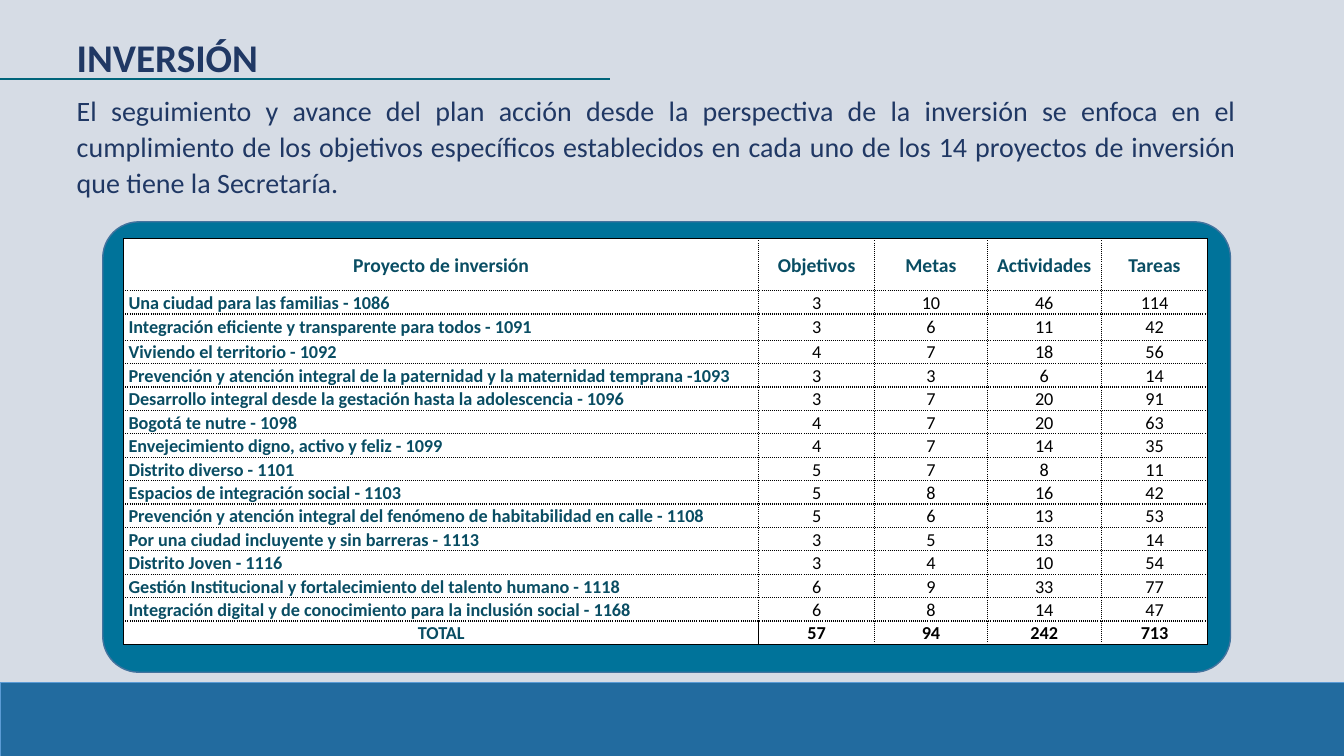
from dataclasses import dataclass

from lxml import etree
from pptx import Presentation
from pptx.dml.color import RGBColor
from pptx.enum import shapes, text
from pptx.oxml import ns
from pptx.util import Cm, Pt


@dataclass(frozen=True)
class Theme:
    font: str = "Calibri"
    background: str = "D6DCE5"
    heading: str = "203864"
    rule: str = "00647A"
    footer: str = "226B9F"
    footer_edge: str = "5B9BD5"
    panel: str = "00739A"
    panel_edge: str = "43739E"
    label: str = "094D63"
    ink: str = "000000"
    paper: str = "FFFFFF"
    title_size: float = 28
    body_size: float = 20
    header_size: float = 14
    row_size: float = 13
    spacing: float = 1.07


@dataclass(frozen=True)
class Box:
    """A place on the slide, in centimetres."""
    left: float
    top: float
    width: float
    height: float

    def lengths(self) -> tuple:
        return Cm(self.left), Cm(self.top), Cm(self.width), Cm(self.height)


@dataclass(frozen=True)
class Project:
    name: str
    figures: tuple[int, int, int, int]


@dataclass(frozen=True)
class Panel:
    kind: shapes.MSO_SHAPE
    box: Box
    fill: str
    edge: str
    edge_width: float


THEME = Theme()
ALIGN = text.PP_ALIGN
WIDTH, HEIGHT = 33.87, 19.05

FOOTER = Panel(shapes.MSO_SHAPE.RECTANGLE, Box(0, 17.2, WIDTH, 1.85),
               THEME.footer, THEME.footer_edge, 0.5)
FRAME = Panel(shapes.MSO_SHAPE.ROUNDED_RECTANGLE, Box(2.59, 5.59, 28.42, 11.35),
              THEME.panel, THEME.panel_edge, 1)

TITLE = "INVERSIÓN"
INTRO = ("El seguimiento y avance del plan acción desde la perspectiva de la inversión "
         "se enfoca en el cumplimiento de los objetivos específicos establecidos en cada "
         "uno de los 14 proyectos de inversión que tiene la Secretaría.")
HEADERS = ("Proyecto de inversión", "Objetivos", "Metas", "Actividades", "Tareas")
PROJECTS = (
    Project("Una ciudad para las familias - 1086", (3, 10, 46, 114)),
    Project("Integración eficiente y transparente para todos - 1091", (3, 6, 11, 42)),
    Project("Viviendo el territorio - 1092", (4, 7, 18, 56)),
    Project("Prevención y atención integral de la paternidad y la maternidad temprana -1093",
            (3, 3, 6, 14)),
    Project("Desarrollo integral desde la gestación hasta la adolescencia - 1096",
            (3, 7, 20, 91)),
    Project("Bogotá te nutre - 1098", (4, 7, 20, 63)),
    Project("Envejecimiento digno, activo y feliz - 1099", (4, 7, 14, 35)),
    Project("Distrito diverso - 1101", (5, 7, 8, 11)),
    Project("Espacios de integración social - 1103", (5, 8, 16, 42)),
    Project("Prevención y atención integral del fenómeno de habitabilidad en calle - 1108",
            (5, 6, 13, 53)),
    Project("Por una ciudad incluyente y sin barreras - 1113", (3, 5, 13, 14)),
    Project("Distrito Joven - 1116", (3, 4, 10, 54)),
    Project("Gestión Institucional y fortalecimiento del talento humano - 1118",
            (6, 9, 33, 77)),
    Project("Integración digital y de conocimiento para la inclusión social - 1168",
            (6, 8, 14, 47)),
)
COLUMN_WIDTHS = (16.0, 2.92, 2.84, 2.87, 2.69)
HEADER_HEIGHT, TALL_ROW, ROW_HEIGHT = 1.3, 0.66, 0.51


def write(frame, words: str, size: float, color: str, bold: bool, align: ALIGN,
          spacing: float) -> None:
    frame.text = words
    paragraph = frame.paragraphs[0]
    paragraph.alignment = align
    paragraph.line_spacing = spacing
    paragraph.space_before = Pt(0)
    font = paragraph.runs[0].font
    font.name, font.size, font.bold = THEME.font, Pt(size), bold
    font.color.rgb = RGBColor.from_string(color)


def fill_placeholder(holder, box: Box, words: str, size: float, bold: bool,
                     spacing: float) -> None:
    holder.left, holder.top, holder.width, holder.height = box.lengths()
    frame = holder.text_frame
    write(frame, words, size, THEME.heading, bold, ALIGN.JUSTIFY, spacing)
    frame.word_wrap = True
    frame.vertical_anchor = text.MSO_ANCHOR.TOP
    frame.auto_size = text.MSO_AUTO_SIZE.SHAPE_TO_FIT_TEXT


def remove_bullet(paragraph) -> None:
    properties = paragraph._p.get_or_add_pPr()
    properties.set("marL", "0")
    properties.set("indent", "0")
    etree.SubElement(properties, ns.qn("a:buNone"))


def draw_panel(slide, panel: Panel):
    shape = slide.shapes.add_shape(panel.kind, *panel.box.lengths())
    shape.shadow.inherit = False
    shape.fill.solid()
    shape.fill.fore_color.rgb = RGBColor.from_string(panel.fill)
    shape.line.color.rgb = RGBColor.from_string(panel.edge)
    shape.line.width = Pt(panel.edge_width)
    return shape


def draw_title_rule(slide) -> None:
    rule = slide.shapes.add_connector(shapes.MSO_CONNECTOR.STRAIGHT,
                                      Cm(0), Cm(1.98), Cm(15.37), Cm(1.98))
    rule.line.color.rgb = RGBColor.from_string(THEME.rule)
    rule.line.width = Pt(1.5)
    etree.SubElement(rule._element.spPr, ns.qn("a:effectLst"))


def add_border(cell, side: str, solid: bool) -> None:
    line = etree.SubElement(cell._tc.get_or_add_tcPr(), ns.qn(f"a:ln{side}"), w=str(Pt(1)))
    fill = etree.SubElement(line, ns.qn("a:solidFill"))
    etree.SubElement(fill, ns.qn("a:srgbClr"), val=THEME.ink)
    etree.SubElement(line, ns.qn("a:prstDash"), val="solid" if solid else "sysDot")


def draw_projects(slide) -> None:
    totals = [sum(column) for column in zip(*(p.figures for p in PROJECTS))]
    rows = [HEADERS, *((p.name, *p.figures) for p in PROJECTS), ("TOTAL", *totals)]
    last_row, last_column = len(rows) - 1, len(HEADERS) - 1
    heights = [HEADER_HEIGHT, ROW_HEIGHT, TALL_ROW] + [ROW_HEIGHT] * (len(rows) - 3)
    place = Box(3.12, 6.02, sum(COLUMN_WIDTHS), sum(heights))
    table = slide.shapes.add_table(len(rows), len(HEADERS), *place.lengths()).table
    table.first_row = table.horz_banding = False
    for column, width in zip(table.columns, COLUMN_WIDTHS):
        column.width = Cm(width)
    for r, (values, height) in enumerate(zip(rows, heights)):
        table.rows[r].height = Cm(height)
        header, total = r == 0, r == last_row
        for c, value in enumerate(values):
            cell = table.cell(r, c)
            label = header or c == 0
            project_name = c == 0 and not header and not total
            write(cell.text_frame, str(value),
                  THEME.header_size if header else THEME.row_size,
                  THEME.label if label else THEME.ink, label or total,
                  ALIGN.LEFT if project_name else ALIGN.CENTER, THEME.spacing)
            cell.vertical_anchor = text.MSO_ANCHOR.MIDDLE
            cell.margin_left = cell.margin_right = Cm(0.12)
            cell.margin_top = cell.margin_bottom = 0
            add_border(cell, "L", c == 0 or (total and c == 1))
            add_border(cell, "R", c == last_column or (total and c == 0))
            add_border(cell, "T", header)
            add_border(cell, "B", total)
            cell.fill.solid()
            cell.fill.fore_color.rgb = RGBColor.from_string(THEME.paper)


def main() -> None:
    deck = Presentation()
    deck.slide_width, deck.slide_height = Cm(WIDTH), Cm(HEIGHT)
    slide = deck.slides.add_slide(deck.slide_layouts[1])
    slide.background.fill.solid()
    slide.background.fill.fore_color.rgb = RGBColor.from_string(THEME.background)

    draw_panel(slide, FOOTER)
    draw_panel(slide, FRAME).adjustments[0] = 0.08
    intro = slide.placeholders[1]
    fill_placeholder(slide.shapes.title, Box(1.68, 0.71, 27.15, 1.45), TITLE,
                     THEME.title_size, True, 1.0)
    fill_placeholder(intro, Box(1.68, 2.16, 29.72, 2.97), INTRO,
                     THEME.body_size, False, THEME.spacing)
    remove_bullet(intro.text_frame.paragraphs[0])
    draw_projects(slide)
    draw_title_rule(slide)
    deck.save("out.pptx")


if __name__ == "__main__":
    main()
